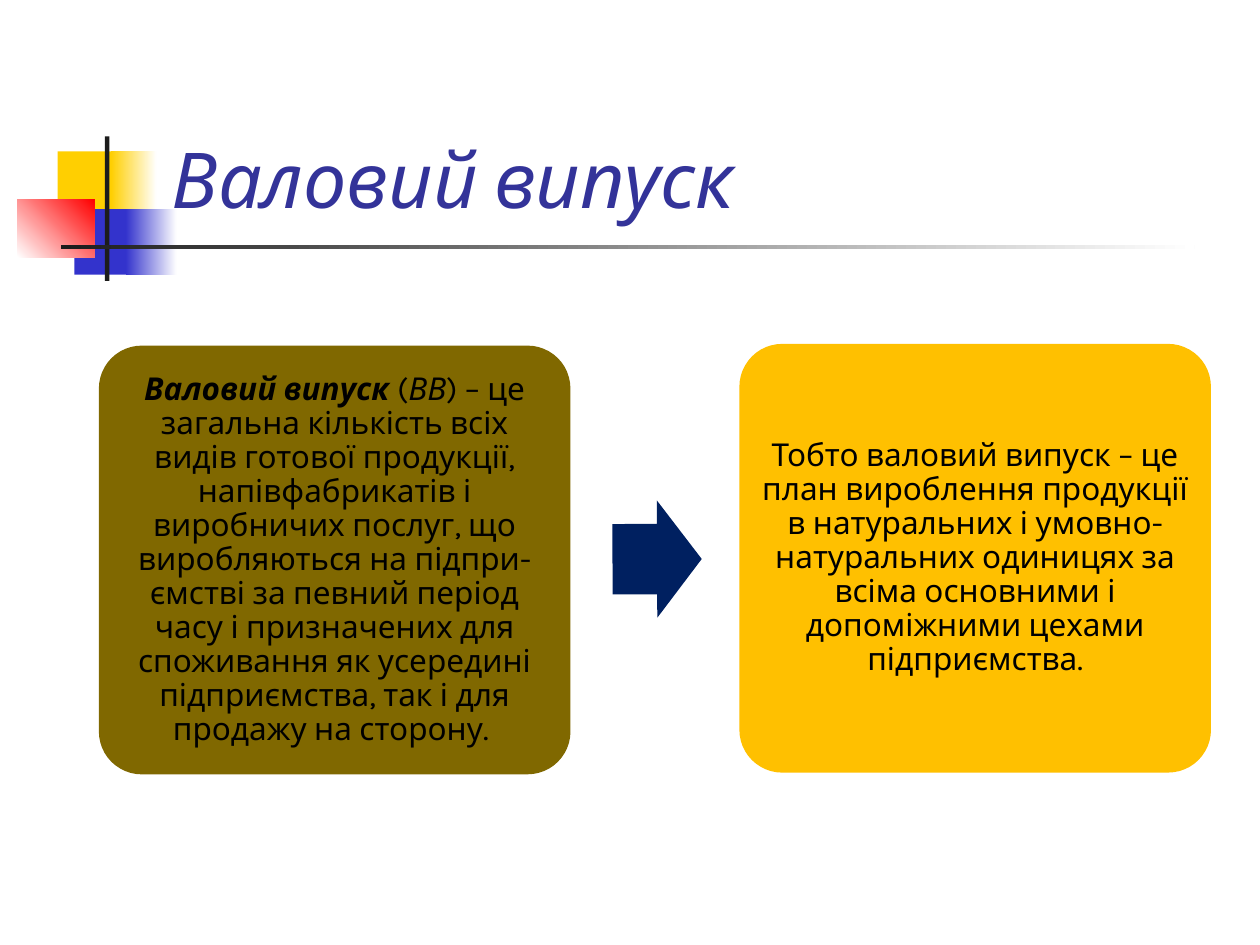
from dataclasses import dataclass

from pptx import Presentation
from pptx.dml.color import RGBColor
from pptx.enum.shapes import MSO_SHAPE
from pptx.enum.text import MSO_ANCHOR, MSO_AUTO_SIZE, PP_ALIGN
from pptx.util import Pt

RECT, ROUNDED = MSO_SHAPE.RECTANGLE, MSO_SHAPE.ROUNDED_RECTANGLE
ARROW = MSO_SHAPE.RIGHT_ARROW
LEFT, CENTER = PP_ALIGN.LEFT, PP_ALIGN.CENTER
MIDDLE, BOTTOM = MSO_ANCHOR.MIDDLE, MSO_ANCHOR.BOTTOM
NO_FIT = MSO_AUTO_SIZE.NONE
TITLE_ONLY = 5


@dataclass(frozen=True)
class Theme:
    font: str = "Karla"
    title_size: int = 44
    body_size: int = 18
    title: str = "333399"
    text: str = "000000"
    white: str = "FFFFFF"
    yellow: str = "FFCF01"
    blue: str = "3333CC"
    red: str = "FF0000"
    dark: str = "1C1C1C"
    olive: str = "806800"
    amber: str = "FFC000"
    navy: str = "002060"


THEME = Theme()


def add_box(slide, kind, box, color, end_color=None, angle=0):
    """Add a borderless shape, solid or fading from color to end_color."""
    sp = slide.shapes.add_shape(kind, *map(Pt, box))
    sp.shadow.inherit = False
    sp.line.fill.background()
    if end_color is None:
        sp.fill.solid()
        sp.fill.fore_color.rgb = RGBColor.from_string(color)
    else:
        sp.fill.gradient()
        sp.fill.gradient_angle = angle
        for stop, value in zip(sp.fill.gradient_stops, (color, end_color)):
            stop.color.rgb = RGBColor.from_string(value)
    return sp


def write_text(sp, runs, size, color, align=LEFT, anchor=MIDDLE, spacing=1.0):
    """Write one paragraph from (text, bold, italic) runs."""
    tf = sp.text_frame
    tf.word_wrap = True
    tf.auto_size = NO_FIT
    tf.vertical_anchor = anchor
    p = tf.paragraphs[0]
    p.alignment = align
    p.line_spacing = spacing
    for text, bold, italic in runs:
        r = p.add_run()
        r.text = text
        r.font.name = THEME.font
        r.font.size = Pt(size)
        r.font.bold = bold
        r.font.italic = italic
        r.font.color.rgb = RGBColor.from_string(color)


def add_decoration(slide):
    t = THEME
    add_box(slide, RECT, (33, 86.5, 35, 37.5), t.yellow)
    add_box(slide, RECT, (63.5, 86.5, 26, 37.5), t.yellow, t.white)
    add_box(slide, RECT, (42.5, 119.5, 33, 37.5), t.blue)
    add_box(slide, RECT, (72, 119.5, 29, 37.5), t.blue, t.white)
    add_box(slide, RECT, (10, 114, 44, 33), t.white, t.red, angle=45)
    add_box(slide, RECT, (60, 78, 2.5, 82.5), t.dark)
    add_box(slide, RECT, (34.75, 140, 648, 2.5), t.dark, t.white)


def add_title(slide, text):
    sp = slide.shapes.title
    sp.left, sp.top, sp.width, sp.height = map(Pt, (91, 16.5, 613.5, 115))
    write_text(sp, [(text, False, True)], THEME.title_size, THEME.title,
               anchor=BOTTOM)
    # Bring the title in front of the decoration
    slide.shapes.element.append(sp.element)


def add_card(slide, left, top, color, runs):
    sp = add_box(slide, ROUNDED, (left, top, 269.5, 245), color)
    sp.adjustments[0] = 0.1
    tf = sp.text_frame
    tf.margin_left = tf.margin_right = Pt(5)
    tf.margin_top = tf.margin_bottom = Pt(5)
    write_text(sp, runs, THEME.body_size, THEME.text, align=CENTER, spacing=0.9)


def add_arrow(slide):
    sp = add_box(slide, ARROW, (350, 286, 51, 67), THEME.navy)
    sp.adjustments[0], sp.adjustments[1] = 0.6, 0.5
    sp.rotation = 359.8


def main():
    prs = Presentation()
    prs.slide_width, prs.slide_height = Pt(720), Pt(540)
    slide = prs.slides.add_slide(prs.slide_layouts[TITLE_ONLY])

    # Heading
    add_decoration(slide)
    add_title(slide, "Валовий випуск")

    # Definition, arrow, conclusion
    add_card(slide, 56.5, 197.5, THEME.olive, [
        ("Валовий випуск", True, True),
        (" (", False, False),
        ("ВВ", False, True),
        (") – це загальна кількість всіх видів готової продукції, "
         "напівфабрикатів і виробничих послуг, що виробляються на "
         "підпри-ємстві за певний період часу і призначених для споживання "
         "як усередині підприємства, так і для продажу на сторону. ",
         False, False),
    ])
    add_arrow(slide)
    add_card(slide, 422.5, 196.5, THEME.amber, [
        ("Тобто валовий випуск – це план вироблення продукції в натуральних "
         "і умовно-натуральних одиницях за всіма основними і допоміжними "
         "цехами підприємства.", False, False),
    ])

    prs.save("out.pptx")


if __name__ == "__main__":
    main()
